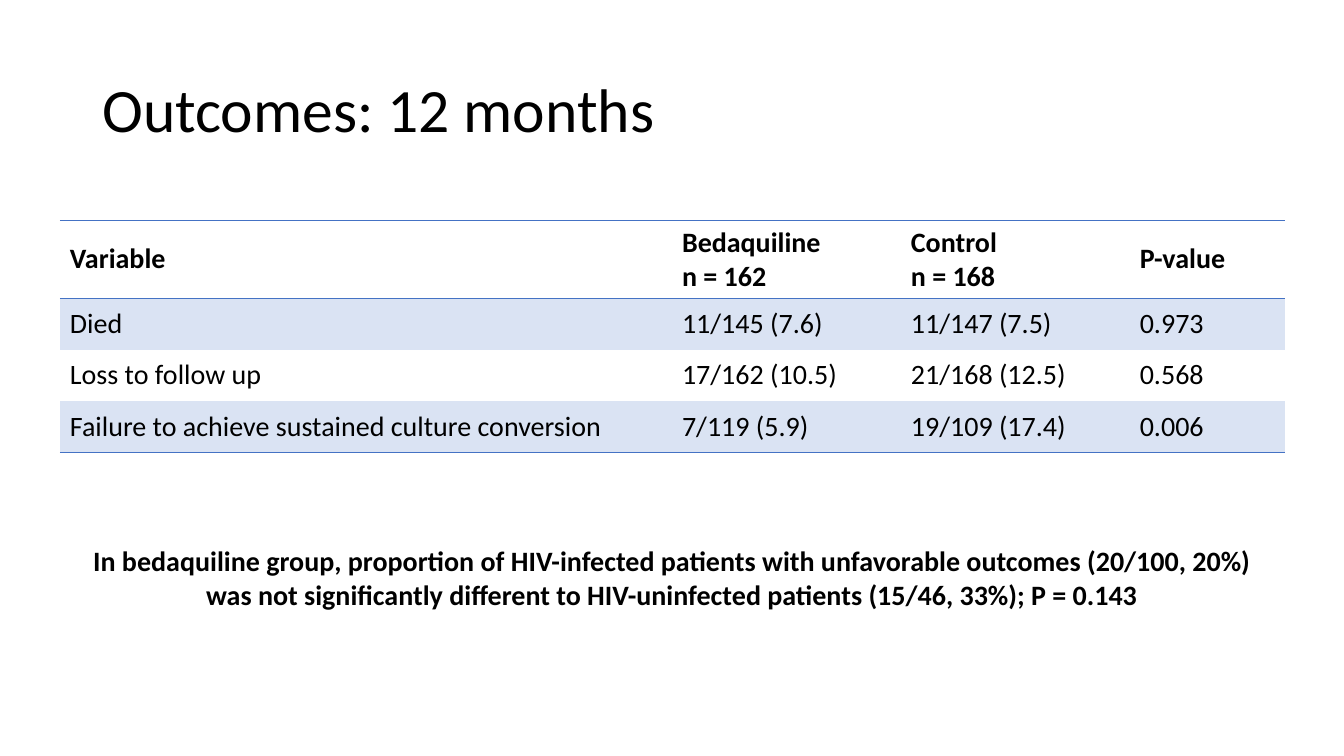
from lxml.etree import SubElement
from pptx import Presentation
from pptx.dml.color import RGBColor
from pptx.enum.text import MSO_ANCHOR, PP_ALIGN
from pptx.oxml import parse_xml
from pptx.oxml.ns import nsdecls, qn
from pptx.util import Pt

PX = 9525  # EMU per px, 96 px to the inch
FONT = "Calibri"
COLORS = {"text": "000000", "rule": "4472C4", "band": "DAE3F3"}
NO_STYLE = "{2D5ABB26-0587-4C30-8999-92F81FD0307C}"

COLUMN_WIDTHS = [583, 218, 218, 148]
HEADER_HEIGHT, ROW_HEIGHT = 74, 49
OUTCOMES = [
    ["Variable", "Bedaquiline\nn = 162", "Control\nn = 168", "P-value"],
    ["Died", "11/145 (7.6)", "11/147 (7.5)", "0.973"],
    ["Loss to follow up", "17/162 (10.5)", "21/168 (12.5)", "0.568"],
    ["Failure to achieve sustained culture conversion",
     "7/119 (5.9)", "19/109 (17.4)", "0.006"],
]
CONCLUSION = (
    "In bedaquiline group, proportion of HIV-infected patients with unfavorable "
    "outcomes (20/100, 20%) was not significantly different to HIV-uninfected "
    "patients (15/46, 33%); P = 0.143"
)


def write(frame, text, size, bold=False):
    frame.text = text
    for paragraph in frame.paragraphs:
        font = paragraph.font
        font.name, font.size, font.bold = FONT, Pt(size), bold
        font.color.rgb = RGBColor.from_string(COLORS["text"])


def add_text(slide, box, text, size, bold=False, anchor=MSO_ANCHOR.TOP,
             align=PP_ALIGN.LEFT, line_spacing=1.0):
    frame = slide.shapes.add_textbox(*(length * PX for length in box)).text_frame
    frame.word_wrap = True
    frame.vertical_anchor = anchor
    write(frame, text, size, bold)
    frame.paragraphs[0].alignment = align
    frame.paragraphs[0].line_spacing = line_spacing


def add_rules(cell, sides):
    """Draw cell borders; sides are given in schema order, T before B."""
    properties = cell._tc.get_or_add_tcPr()
    for index, side in enumerate(sides):
        line = parse_xml(f'<a:ln{side} {nsdecls("a")} w="{Pt(1)}"/>')
        fill = SubElement(line, qn("a:solidFill"))
        SubElement(fill, qn("a:srgbClr"), val=COLORS["rule"])
        properties.insert(index, line)


def add_outcomes_table(slide, left, top):
    heights = [HEADER_HEIGHT] + [ROW_HEIGHT] * (len(OUTCOMES) - 1)
    table = slide.shapes.add_table(
        len(heights), len(COLUMN_WIDTHS), left * PX, top * PX,
        sum(COLUMN_WIDTHS) * PX, sum(heights) * PX).table
    table._tbl.tblPr.find(qn("a:tableStyleId")).text = NO_STYLE
    for column, width in zip(table.columns, COLUMN_WIDTHS):
        column.width = width * PX

    for index, (row, height) in enumerate(zip(table.rows, heights)):
        row.height = height * PX
        is_header, is_last = index == 0, index == len(heights) - 1
        for cell, text in zip(row.cells, OUTCOMES[index]):
            cell.vertical_anchor = MSO_ANCHOR.MIDDLE
            write(cell.text_frame, text, 20, bold=is_header)
            # Odd rows are banded
            if index % 2:
                cell.fill.solid()
                cell.fill.fore_color.rgb = RGBColor.from_string(COLORS["band"])
            else:
                cell.fill.background()
            add_rules(cell, "TB" if is_header else "B" if is_last else "")


def build_outcomes_slide(presentation):
    slide = presentation.slides.add_slide(presentation.slide_layouts[6])
    # Title
    add_text(slide, (88, 38, 1104, 139), "Outcomes: 12 months", 44,
             anchor=MSO_ANCHOR.MIDDLE, line_spacing=0.9)
    # Results
    add_outcomes_table(slide, 57, 210)
    # Conclusion
    add_text(slide, (72, 513, 1136, 107), CONCLUSION, 20, bold=True,
             align=PP_ALIGN.CENTER)


def main():
    presentation = Presentation()
    presentation.slide_width, presentation.slide_height = 1280 * PX, 720 * PX
    build_outcomes_slide(presentation)
    presentation.save("out.pptx")


if __name__ == "__main__":
    main()
